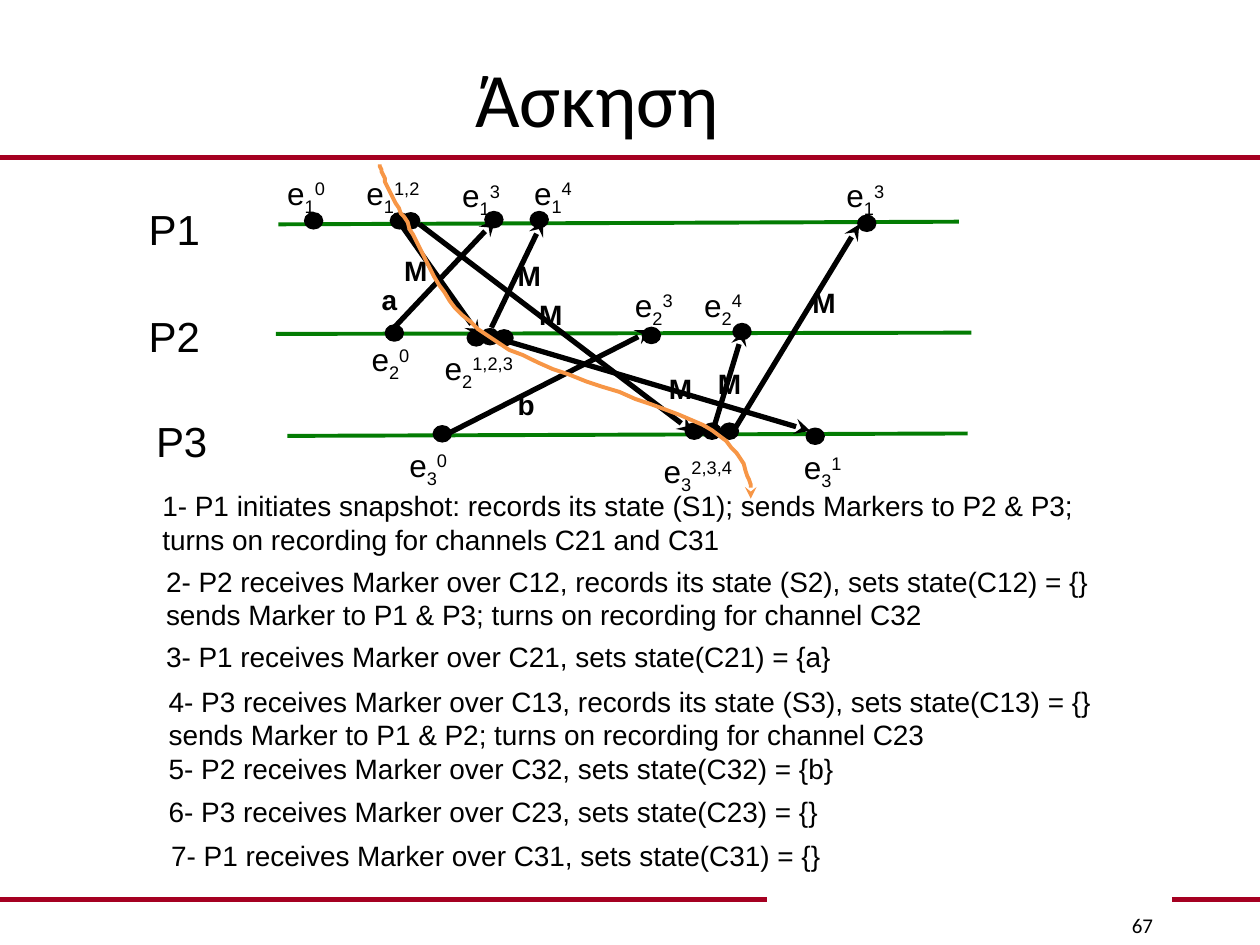
from lxml import etree
from pptx import Presentation
from pptx.dml.color import RGBColor
from pptx.enum.shapes import MSO_CONNECTOR, MSO_SHAPE
from pptx.enum.text import MSO_ANCHOR, PP_ALIGN
from pptx.oxml.ns import qn
from pptx.util import Pt

STRAIGHT = MSO_CONNECTOR.STRAIGHT
OVAL = MSO_SHAPE.OVAL
MIDDLE = MSO_ANCHOR.MIDDLE
CENTER = PP_ALIGN.CENTER
RIGHT = PP_ALIGN.RIGHT

COLORS = {"rule": "A50021", "timeline": "037C03", "ink": "000000", "cut": "F79646"}

TITLE = "Άσκηση"
PAGE_NUMBER = "67"
RULES = [(669.6, 514.1, 720, 514.1), (0, 514.1, 438.5, 514.1), (0, 90, 720, 90)]
TIMELINES = [
    (159.1, 128.2, 547.9, 126.7),
    (157.7, 190.8, 555.1, 190.1),
    (164.2, 249.1, 553, 247.7),
]
PROCESSES = [("P1", 77.8, 113), ("P2", 77.8, 174.2), ("P3", 82.1, 234)]
DOT_WIDTH, DOT_HEIGHT = 10.1, 9
DOTS = {
    "P1": [(174.2, 121.7), (223.2, 121.7), (229.7, 121.7), (277.2, 121),
           (303.1, 121), (490.3, 123.1)],
    "P2": [(220.3, 185.8), (267.1, 188.6), (275, 187.9), (283, 188.6),
           (367.2, 187.2), (419, 185)],
    "P3": [(247.7, 243.4), (391.7, 241.9), (401.8, 241.9), (411.8, 241.9),
           (460.8, 244.8)],
}
MESSAGES = [
    (223.9, 188.6, 283, 126),
    (252, 249.8, 372.2, 188.6),
    (229, 128.2, 274.3, 192.2),
    (239.8, 128.2, 396, 247),
    (280.8, 187.2, 310.3, 126),
    (290.2, 195.1, 463, 246.2),
    (408.2, 243.4, 424.8, 188.6),
    (418.3, 247.7, 491, 128.2),
]
MESSAGE_LABELS = [
    ("a", 211, 157.7), ("b", 288.7, 218.2), ("M", 301, 166.3), ("M", 223.9, 141.1),
    ("M", 288.7, 144), ("M", 375.1, 208.8), ("M", 457.2, 159.8), ("M", 403.2, 205.9),
]
EVENTS = [
    ("1", "0", 157, 95.8, 43.9), ("1", "1,2", 202.3, 95.8, 49.7),
    ("1", "3", 257, 97.2, 43.9), ("1", "4", 298.1, 95.8, 43.9),
    ("1", "3", 476.6, 97.2, 43.9), ("2", "0", 205.2, 190.8, 43.9),
    ("2", "1,2,3", 247, 195.8, 59), ("2", "3", 355.7, 159.8, 43.9),
    ("2", "4", 395.3, 159.8, 43.9), ("3", "0", 226.8, 251.3, 43.9),
    ("3", "2,3,4", 372.2, 254.9, 63.4), ("3", "1", 452.2, 252.7, 43.9),
]
STEPS = [
    ("1- P1 initiates snapshot: records its state (S1); sends Markers to P2 & P3; "
     "turns on recording for channels C21 and C31", 85.7, 275.8, 540.7, 46.1),
    ("2- P2 receives Marker over C12, records its state (S2), sets state(C12) = {} "
     "sends Marker to P1 & P3; turns on recording for channel C32", 87.8, 319, 550.8, 46.1),
    ("3- P1 receives Marker over C21, sets state(C21) = {a}", 87.8, 362.2, 550.8, 26.6),
    ("4- P3 receives Marker over C13, records its state (S3), sets state(C13) = {} "
     "sends Marker to P1 & P2; turns on recording for channel C23", 89.3, 387.4, 550.8, 46.1),
    ("5- P2 receives Marker over C32, sets state(C32) = {b}", 89.3, 426.2, 550.8, 26.6),
    ("6- P3 receives Marker over C23, sets state(C23) = {}", 89.3, 450.7, 550.8, 26.6),
    ("7- P1 receives Marker over C31, sets state(C31) = {}", 90.7, 475.9, 550.8, 26.6),
]
CUT_START = (216.7, 93.6)
CUT_CURVES = [
    ((219.6, 102.2), (222.5, 110.9), (232.6, 127.4)),
    ((242.6, 144), (249.1, 172.1), (278.6, 192.2)),
    ((307.4, 212.4), (382.3, 231.1), (406.8, 246.2)),
    ((432, 262.1), (429.1, 285.1), (429.1, 285.1)),
]
CURVE_STEPS = 16


def color(name):
    return RGBColor.from_string(COLORS[name])


def format_text(frame, size, font="Arial", bold=False, align=None):
    for paragraph in frame.paragraphs:
        paragraph.alignment = align
        for run in paragraph.runs:
            run.font.name = font
            run.font.size = Pt(size)
            run.font.bold = bold
            run.font.color.rgb = color("ink")


def add_text(slide, text, left, top, width, height, size, **style):
    box = slide.shapes.add_textbox(Pt(left), Pt(top), Pt(width), Pt(height))
    frame = box.text_frame
    frame.word_wrap = True
    frame.text = text
    format_text(frame, size, **style)
    return frame


def add_event(slide, process, index, left, top, width):
    frame = add_text(slide, "e", left, top, width, 28.8, 18)
    for text, baseline in ((process, -25000), (index, 30000)):
        run = frame.paragraphs[0].add_run()
        run.text = text
        run._r.get_or_add_rPr().set("baseline", str(baseline))
    format_text(frame, 18)


def add_arrowhead(shape):
    etree.SubElement(shape.line._get_or_add_ln(), qn("a:tailEnd"), type="stealth")


def add_line(slide, ends, color_name, width):
    line = slide.shapes.add_connector(STRAIGHT, *(Pt(value) for value in ends))
    line.line.color.rgb = color(color_name)
    line.line.width = Pt(width)
    etree.SubElement(line._element.spPr, qn("a:effectLst"))
    return line


def add_dot(slide, left, top):
    dot = slide.shapes.add_shape(OVAL, Pt(left), Pt(top), Pt(DOT_WIDTH), Pt(DOT_HEIGHT))
    dot.shadow.inherit = False
    dot.fill.solid()
    dot.fill.fore_color.rgb = color("ink")
    dot.line.color.rgb = color("ink")
    dot.line.width = Pt(1)


def curve_points(start, curves):
    points = []
    for first, second, end in curves:
        for step in range(1, CURVE_STEPS + 1):
            t = step / CURVE_STEPS
            u = 1 - t
            points.append(tuple(
                u**3 * a + 3 * u**2 * t * b + 3 * u * t**2 * c + t**3 * d
                for a, b, c, d in zip(start, first, second, end)))
        start = end
    return points


def add_cut(slide):
    builder = slide.shapes.build_freeform(*CUT_START, scale=Pt(1))
    builder.add_line_segments(curve_points(CUT_START, CUT_CURVES), close=False)
    cut = builder.convert_to_shape()
    cut.shadow.inherit = False
    cut.fill.background()
    cut.line.color.rgb = color("cut")
    cut.line.width = Pt(2.25)
    add_arrowhead(cut)


def main():
    presentation = Presentation()
    presentation.slide_width, presentation.slide_height = Pt(720), Pt(540)
    slide = presentation.slides.add_slide(presentation.slide_layouts[5])

    for ends in RULES:
        add_line(slide, ends, "rule", 3)
    title = slide.shapes.title
    title.left, title.top, title.width, title.height = Pt(54), Pt(25.9), Pt(574.6), Pt(58.3)
    title.text_frame.text = TITLE
    title.text_frame.vertical_anchor = MIDDLE
    format_text(title.text_frame, 44, font="Calibri", align=CENTER)
    number = add_text(slide, PAGE_NUMBER, 516.2, 517, 149.8, 23, 12, font="Calibri", align=RIGHT)
    number.vertical_anchor = MIDDLE

    for ends in TIMELINES:
        add_line(slide, ends, "timeline", 2.25)
    for name, left, top in PROCESSES:
        add_text(slide, name, left, top, 90.7, 36, 24)
        for position in DOTS[name]:
            add_dot(slide, *position)
    for ends in MESSAGES:
        add_arrowhead(add_line(slide, ends, "ink", 3))
    for text, left, top in MESSAGE_LABELS:
        add_text(slide, text, left, top, 28.8, 26.6, 16, bold=True)
    for event in EVENTS:
        add_event(slide, *event)
    for step in STEPS:
        add_text(slide, *step, 16)
    add_cut(slide)
    presentation.save("out.pptx")


if __name__ == "__main__":
    main()
